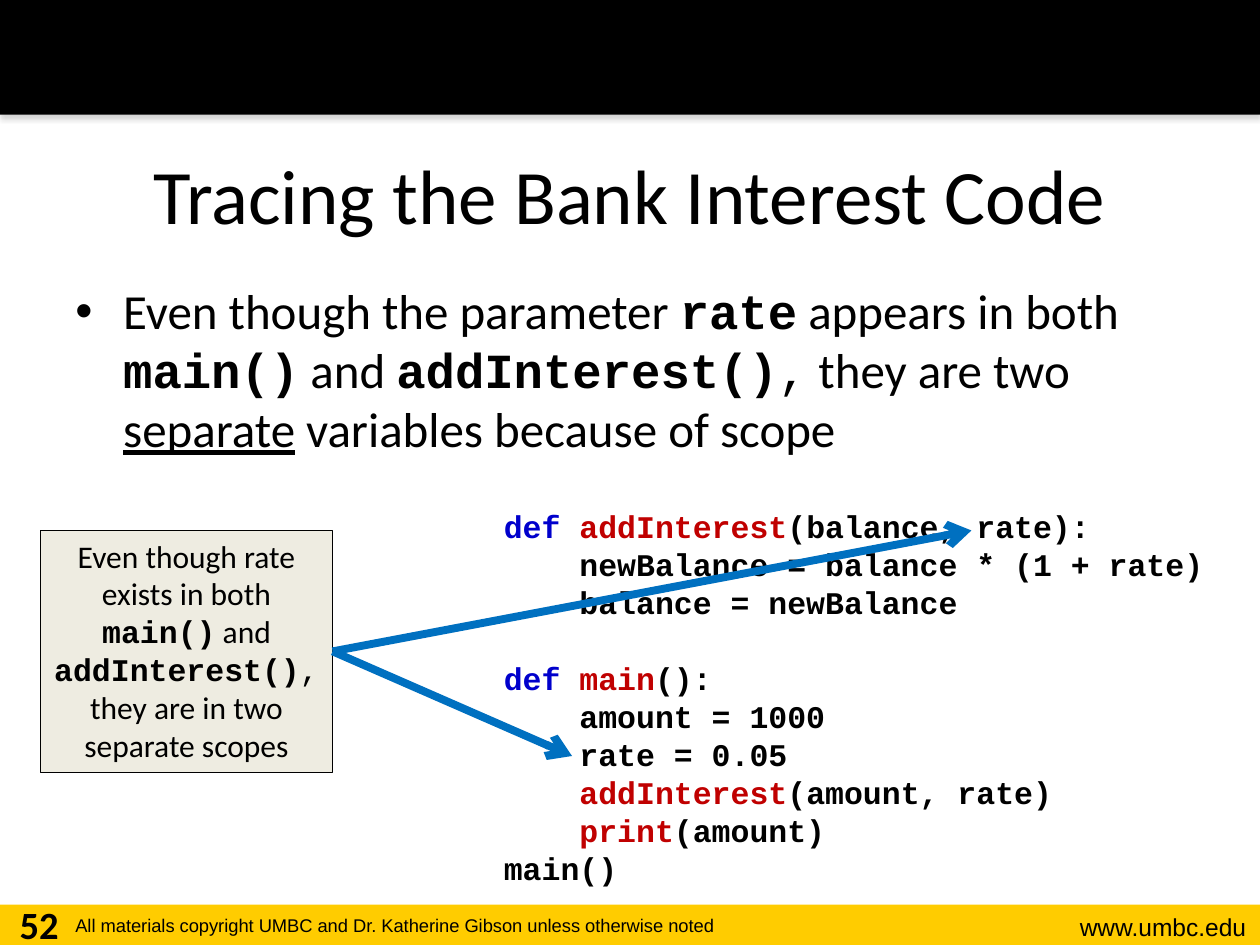
from dataclasses import dataclass
from typing import NamedTuple
from lxml.etree import SubElement
from pptx import Presentation
from pptx.dml.color import RGBColor
from pptx.enum.shapes import MSO_CONNECTOR, MSO_SHAPE
from pptx.enum.text import MSO_ANCHOR, PP_ALIGN
from pptx.oxml import parse_xml
from pptx.oxml.ns import nsdecls, qn
from pptx.util import Inches, Pt


@dataclass(frozen=True)
class Theme:
    """Colours, fonts and type sizes of the slide."""
    black: str = "000000"
    gold: str = "FFCC00"
    cream: str = "EEECE1"
    arrow: str = "0070C0"
    key: str = "0000CC"
    name: str = "C00000"
    sans: str = "Calibri"
    mono: str = "Courier New"
    foot: str = "Arial"
    title: float = 44
    body: float = 28
    page: float = 22
    code: float = 18
    pitch: float = 21.7
    link: float = 14
    legal: float = 10.5


class Box(NamedTuple):
    """A region in inches."""
    x: float
    y: float
    w: float
    h: float

    def inner(self, x, y, w, h):
        """Return a box offset from this one."""
        return Box(self.x + x, self.y + y, w, h)

    def emu(self):
        """Return the four lengths for python-pptx."""
        return [Inches(v) for v in self]


T = Theme()
STYLES = {
    "text": {"name": T.sans},
    "under": {"name": T.sans, "underline": True},
    "mono": {"name": T.mono, "bold": True},
    "thin": {"name": T.mono},
    "key": {"name": T.mono, "bold": True, "color": T.key},
    "call": {"name": T.mono, "bold": True, "color": T.name},
    "foot": {"name": T.foot},
    "page": {"name": T.sans, "bold": True},
}
POINT = [
    ("Even though the parameter ", "text"), ("rate", "mono"),
    (" appears in both ", "text"), ("main()", "mono"), (" and ", "text"),
    ("addInterest()", "mono"), (",", "thin"), (" they are two ", "text"),
    ("separate", "under"), (" variables because of scope", "text"),
]
NOTE = [
    ("Even though rate exists in both ", "text"), ("main()", "mono"),
    (" and ", "text"), ("addInterest()", "mono"), (", ", "thin"),
    ("they are in two separate scopes", "text"),
]
CODE = [
    [[("def ", "key"), ("addInterest", "call"), ("(balance, rate):", "mono")],
     [("    newBalance = balance * (1 + rate)", "mono")],
     [("    balance = newBalance", "mono")]],
    [[("def ", "key"), ("main", "call"), ("():", "mono")],
     [("    amount = 1000", "mono")],
     [("    rate = 0.05", "mono")],
     [("    ", "mono"), ("addInterest", "call"), ("(amount, rate)", "mono")],
     [("    ", "mono"), ("print", "call"), ("(amount)", "mono")],
     [("main()", "mono")]],
]


def apply(target, values):
    """Set each attribute named in a dict."""
    for key, value in values.items():
        setattr(target, key, value)


def write(para, runs, size, align=PP_ALIGN.LEFT):
    """Fill a paragraph with styled runs."""
    para.alignment = align
    for text, style in runs:
        run = para.add_run()
        run.text = text
        look = {"size": Pt(size), **STYLES[style]}
        run.font.color.rgb = RGBColor.from_string(look.pop("color", T.black))
        apply(run.font, look)


def label(slide, box, runs, size, align=PP_ALIGN.LEFT, **frame):
    """Add a text box with one paragraph and return that paragraph."""
    text = slide.shapes.add_textbox(*box.emu()).text_frame
    apply(text, {"word_wrap": True, **frame})
    para = text.paragraphs[0]
    write(para, runs, size, align)
    return para


def block(slide, box, fill, edge=None):
    """Add a flat rectangle, outlined if an edge colour is given."""
    shape = slide.shapes.add_shape(MSO_SHAPE.RECTANGLE, *box.emu())
    shape.shadow.inherit = False
    shape.fill.solid()
    shape.fill.fore_color.rgb = RGBColor.from_string(fill)
    if edge:
        shape.line.color.rgb = RGBColor.from_string(edge)
        shape.line.width = Pt(0.75)
    else:
        shape.line.fill.background()
    return shape


def header(slide, box):
    """Draw the top band with its soft shadow."""
    band = block(slide, box, T.black)
    band.element.spPr.find(qn("a:effectLst")).append(parse_xml(
        f'<a:outerShdw {nsdecls("a")} blurRad="{Pt(3.1)}" dist="{Pt(1.8)}" '
        'dir="5400000" rotWithShape="0"><a:srgbClr val="808080">'
        '<a:alpha val="35000"/></a:srgbClr></a:outerShdw>'))


def footer(slide, box):
    """Draw the bottom band with page number, notice and address."""
    block(slide, box, T.gold)
    label(slide, box.inner(0, -0.08, 0.62, 0.4), [("52", "page")], T.page,
          PP_ALIGN.CENTER)
    notice = ("All materials copyright UMBC and Dr. Katherine Gibson "
              "unless otherwise noted")
    label(slide, box.inner(0.5, 0.03, 6.56, 0.29), [(notice, "foot")], T.legal)
    label(slide, box.inner(8, 0.01, 1.99, 0.34), [("www.umbc.edu", "foot")],
          T.link, PP_ALIGN.RIGHT)


def title(slide, box):
    """Place the slide title."""
    label(slide, box, [("Tracing the Bank Interest Code", "text")], T.title,
          PP_ALIGN.CENTER, vertical_anchor=MSO_ANCHOR.MIDDLE)


def body(slide, box):
    """Place the bulleted statement."""
    para = label(slide, box, POINT, T.body)
    props = para._p.get_or_add_pPr()
    indent = Inches(0.38)
    props.set("marL", str(indent))
    props.set("indent", str(-indent))
    SubElement(props, qn("a:buFont")).set("typeface", T.foot)
    SubElement(props, qn("a:buChar")).set("char", "•")


def listing(slide, box):
    """Place the code, with one empty line's gap between functions."""
    text = slide.shapes.add_textbox(*box.emu()).text_frame
    text.word_wrap = False
    for group, lines in enumerate(CODE):
        for row, runs in enumerate(lines):
            first = group == row == 0
            para = text.paragraphs[0] if first else text.add_paragraph()
            para.line_spacing = Pt(T.pitch)
            if group and not row:
                para.space_before = Pt(T.pitch)
            write(para, runs, T.code)


def callout(slide, box, ends):
    """Place the note and its arrows to each end point."""
    note = block(slide, box, T.cream, T.black)
    apply(note.text_frame, {"word_wrap": True,
                            "vertical_anchor": MSO_ANCHOR.TOP})
    write(note.text_frame.paragraphs[0], NOTE, T.code, PP_ALIGN.CENTER)
    start = Inches(box.x + box.w), Inches(box.y + box.h / 2)
    for x, y in ends:
        line = slide.shapes.add_connector(
            MSO_CONNECTOR.STRAIGHT, *start, Inches(x), Inches(y))
        line.begin_connect(note, 3)
        line.line.color.rgb = RGBColor.from_string(T.arrow)
        line.line.width = Pt(4.5)
        edge = line._element.spPr.find(qn("a:ln"))
        SubElement(edge, qn("a:tailEnd")).set("type", "arrow")
        SubElement(line._element.spPr, qn("a:effectLst"))


def main():
    """Build and save the slide."""
    deck = Presentation()
    apply(deck, {"slide_width": Inches(10), "slide_height": Inches(7.5)})
    slide = deck.slides.add_slide(deck.slide_layouts[6])
    footer(slide, Box(0, 7.18, 10, 0.32))
    header(slide, Box(0, 0, 10, 0.91))
    title(slide, Box(0.5, 0.91, 9, 1.25))
    body(slide, Box(0.5, 2.18, 9, 4.92))
    listing(slide, Box(3.9, 3.97, 5.78, 3.13))
    callout(slide, Box(0.32, 4.21, 2.32, 1.92), [(4.54, 6), (7.71, 4.21)])
    deck.save("out.pptx")


if __name__ == "__main__":
    main()
